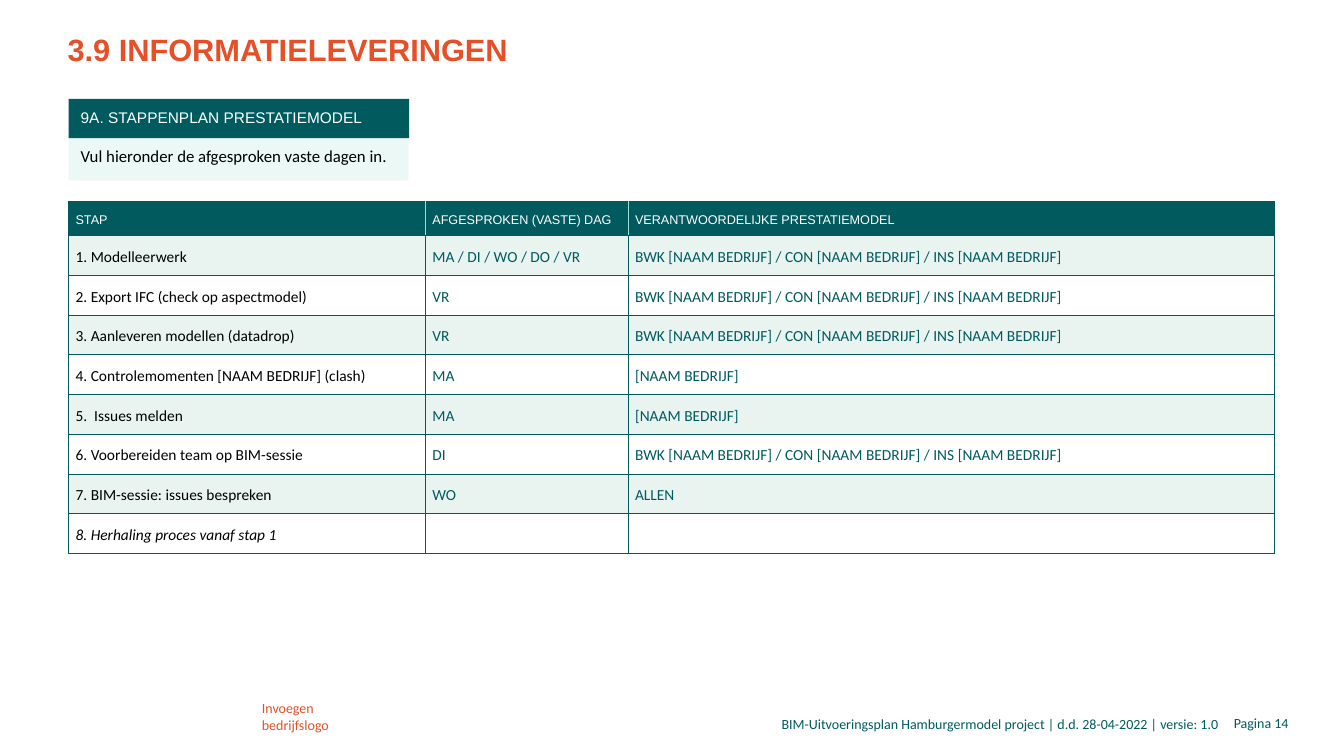
import pptx
import pptx.dml.color
import pptx.enum.shapes
import pptx.enum.text
import pptx.oxml
import pptx.oxml.ns
import pptx.util

TEAL, ORANGE, MINT = "005A5E", "E55028", "9DDED3"
PALE, BAND, WHITE, BLACK = "EBF8F6", "E9F3F0", "FFFFFF", "000000"
HEADING, BODY = "Arial", "Calibri"
ALIGN = pptx.enum.text.PP_ALIGN
MIDDLE = pptx.enum.text.MSO_ANCHOR.MIDDLE
FIT = pptx.enum.text.MSO_AUTO_SIZE.SHAPE_TO_FIT_TEXT
TEAMS = "BWK [NAAM BEDRIJF] / CON [NAAM BEDRIJF] / INS [NAAM BEDRIJF]"

STEPS = [
    ("STAP", "AFGESPROKEN (VASTE) DAG", "VERANTWOORDELIJKE PRESTATIEMODEL"),
    ("1. Modelleerwerk", "MA / DI / WO / DO / VR", TEAMS),
    ("2. Export IFC (check op aspectmodel)", "VR", TEAMS),
    ("3. Aanleveren modellen (datadrop)", "VR", TEAMS),
    ("4. Controlemomenten [NAAM BEDRIJF] (clash)", "MA", "[NAAM BEDRIJF]"),
    ("5.  Issues melden", "MA", "[NAAM BEDRIJF]"),
    ("6. Voorbereiden team op BIM-sessie", "DI", TEAMS),
    ("7. BIM-sessie: issues bespreken", "WO", "ALLEN"),
    ("8. Herhaling proces vanaf stap 1", "", ""),
]


def color(value):
    return pptx.dml.color.RGBColor.from_string(value)


def apply(target, values):
    for name, value in values.items():
        setattr(target, name, value)


class SlideBuilder:
    def __init__(self, deck):
        self.deck = deck
        self.page = deck.slides.add_slide(deck.slide_layouts[6])

    def across(self, share):
        return round(self.deck.slide_width * share / 100)

    def down(self, share):
        return round(self.deck.slide_height * share / 100)

    def place(self, left, top, width, height):
        return self.across(left), self.down(top), self.across(width), self.down(height)

    def add_lines(self, frame, lines, size, font, ink, align=ALIGN.LEFT, spacing=1.0, **style):
        for index, line in enumerate(lines):
            para = frame.add_paragraph() if index else frame.paragraphs[0]
            apply(para, {"alignment": align, "line_spacing": spacing})
            if line:
                span = para.add_run()
                span.text = line
                apply(span.font, {"size": pptx.util.Pt(size), "name": font, "bold": False, **style})
                span.font.color.rgb = color(ink)

    def fill_frame(self, box, lines, insets, frame_style, text):
        sides = ("margin_left", "margin_top", "margin_right", "margin_bottom")
        margins = {side: pptx.util.Inches(inset) for side, inset in zip(sides, insets)}
        apply(box.text_frame, {"word_wrap": True, **margins, **frame_style})
        self.add_lines(box.text_frame, lines, **text)

    def text(self, area, lines, insets=(0.1, 0.05, 0.1, 0.05), frame_style=None, **text):
        box = self.page.shapes.add_textbox(*self.place(*area))
        self.fill_frame(box, lines, insets, frame_style or {"auto_size": FIT}, text)

    def panel(self, area, fill, lines, insets, frame_style, **text):
        kind = pptx.enum.shapes.MSO_SHAPE.RECTANGLE
        box = self.page.shapes.add_shape(kind, *self.place(*area))
        box.shadow.inherit = False
        box.fill.solid()
        box.fill.fore_color.rgb = color(fill)
        box.line.fill.background()
        self.fill_frame(box, lines, insets, frame_style, text)

    def borders(self, cell, edges):
        properties = cell._tc.get_or_add_tcPr()
        for side, ink in edges.items():
            properties.append(pptx.oxml.parse_xml(
                f'<a:ln{side} {pptx.oxml.ns.nsdecls("a")} w="9525"><a:solidFill>'
                f'<a:srgbClr val="{ink}"/></a:solidFill></a:ln{side}>'))

    def table(self, left, top, columns, heights, rows):
        area = self.place(left, top, sum(columns), sum(heights))
        grid = self.page.shapes.add_table(len(rows), len(columns), *area).table
        for column, width in zip(grid.columns, columns):
            column.width = self.across(width)
        for row, height in zip(grid.rows, heights):
            row.height = self.down(height)
        last_row, last_column = len(rows) - 1, len(columns) - 1
        inset = pptx.util.Inches(0.07)
        for r, row in enumerate(rows):
            for c, words in enumerate(row):
                cell = grid.cell(r, c)
                apply(cell, {"margin_left": inset, "margin_right": inset, "margin_top": 0,
                             "margin_bottom": 0, "vertical_anchor": MIDDLE})
                self.borders(cell, {
                    "L": MINT if r == 0 and c > 0 else TEAL,
                    "R": MINT if r == 0 and c < last_column else TEAL,
                    "T": TEAL, "B": TEAL})
                cell.fill.solid()
                cell.fill.fore_color.rgb = color(TEAL if r == 0 else BAND if r % 2 else WHITE)
                if r == 0:
                    style = {"size": 9, "font": HEADING, "ink": WHITE}
                else:
                    style = {"size": 11, "font": BODY, "ink": TEAL if c else BLACK,
                             "italic": r == last_row}
                self.add_lines(cell.text_frame, [words], spacing=1.15, **style)


def main():
    deck = pptx.Presentation()
    deck.slide_width = pptx.util.Inches(13.33)
    deck.slide_height = pptx.util.Inches(7.5)
    slide = SlideBuilder(deck)
    footer = {"size": 10, "font": BODY, "ink": TEAL}
    flush = (0, 0.05, 0, 0.05)

    slide.text((5.03, 3.47, 43.58, 6.27), ["3.9 INFORMATIELEVERINGEN"], (0, 0.05, 0.1, 0.05),
               size=22, font=HEADING, ink=ORANGE, bold=True)
    slide.panel((5.1, 18, 25.28, 5.87), PALE, ["Vul hieronder de afgesproken vaste dagen in."],
                (0.12, 0.12, 0.12, 0.12),
                {"auto_size": FIT, "vertical_anchor": pptx.enum.text.MSO_ANCHOR.TOP},
                size=12, font=BODY, ink=BLACK)
    slide.panel((5.1, 13.07, 25.35, 5.2), TEAL, ["9A. STAPPENPLAN PRESTATIEMODEL"],
                (0.12, 0.05, 0.1, 0.05), {"vertical_anchor": MIDDLE},
                size=11, font=HEADING, ink=WHITE, spacing=0.9)
    slide.table(5.1, 26.67, [26.55, 15.08, 48.07], [4.53] + [5.25] * (len(STEPS) - 1), STEPS)
    slide.text((18.75, 91.87, 8.55, 5.87), ["Invoegen", "bedrijfslogo"],
               size=10, font=BODY, ink=ORANGE)
    slide.text((50.78, 94, 40.58, 3.6),
               ["BIM-Uitvoeringsplan Hamburgermodel project | d.d. 28-04-2022 | versie: 1.0"],
               align=ALIGN.RIGHT, **footer)
    slide.text((90.53, 93.87, 4.05, 3.6), ["Pagina"], flush, align=ALIGN.RIGHT, **footer)
    slide.text((94.58, 93.73, 3.3, 3.73), [" 14"], flush, {"vertical_anchor": MIDDLE}, **footer)
    deck.save("out.pptx")


if __name__ == "__main__":
    main()
